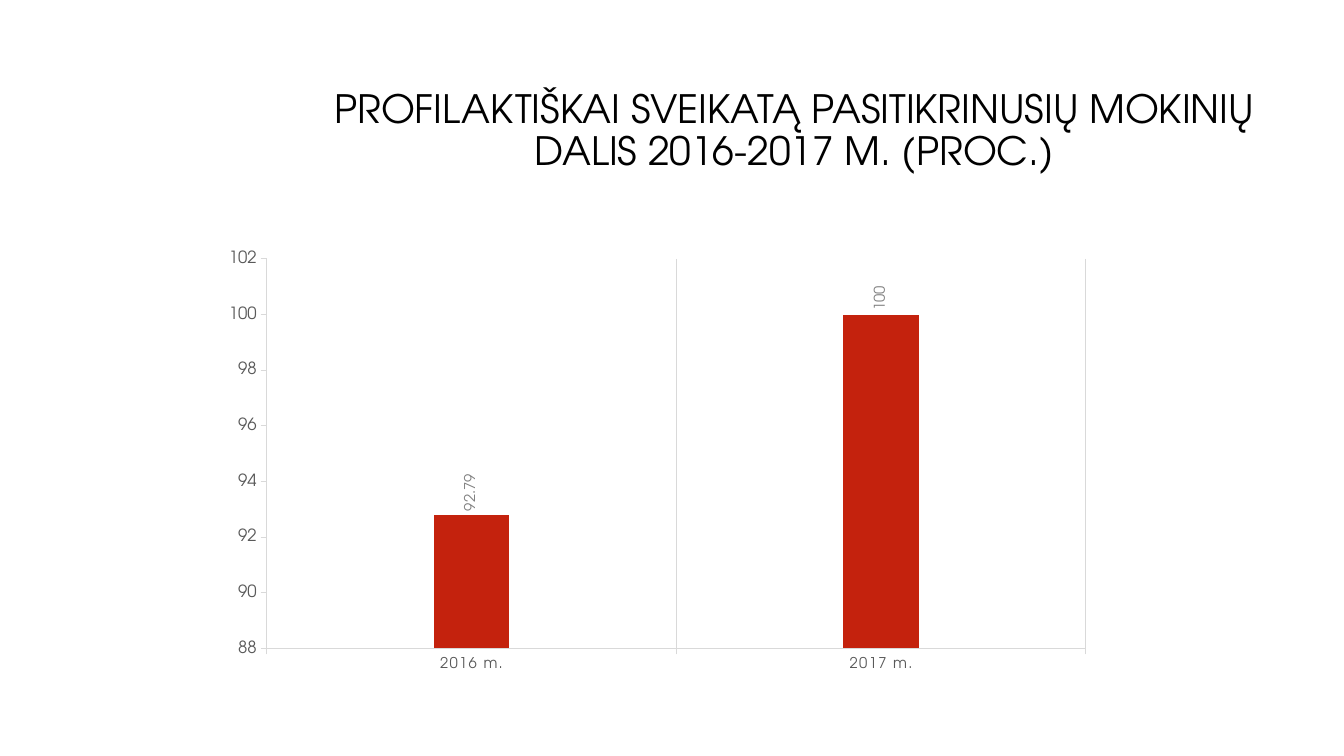
import pptx
import pptx.chart.data
import pptx.dml.color
import pptx.enum.chart
import pptx.enum.text
import pptx.oxml
import pptx.oxml.ns
import pptx.util

FONT = "TeX Gyre Adventor"
COLORS = {
    "background": "FFFFFF",
    "title": "000000",
    "bar": "C4220D",
    "axis": "D9D9D9",
    "tick_text": "595959",
    "value_text": "808080",
}
CHECKED_SHARE = {"2016 m.": 92.79, "2017 m.": 100}


def rgb(name):
    """Return the named colour."""
    return pptx.dml.color.RGBColor.from_string(COLORS[name])


def style_font(font, size, color):
    """Apply the slide's typeface with a size and colour."""
    font.name = FONT
    font.size = pptx.util.Pt(size)
    font.bold = False
    font.color.rgb = rgb(color)


def style_line(line):
    """Draw an axis or grid line."""
    line.color.rgb = rgb("axis")
    line.width = pptx.util.Pt(0.75)


def place_heading(slide, left, top, width, height):
    """Place the heading in the title placeholder."""
    heading = slide.shapes.title
    heading.left, heading.top, heading.width, heading.height = left, top, width, height
    frame = heading.text_frame
    frame.word_wrap = True
    frame.auto_size = pptx.enum.text.MSO_AUTO_SIZE.NONE
    frame.vertical_anchor = pptx.enum.text.MSO_ANCHOR.MIDDLE
    paragraph = frame.paragraphs[0]
    paragraph.alignment = pptx.enum.text.PP_ALIGN.CENTER
    paragraph.line_spacing = 0.9
    run = paragraph.add_run()
    run.text = "PROFILAKTIŠKAI SVEIKATĄ PASITIKRINUSIŲ MOKINIŲ DALIS 2016-2017 M. (PROC.)"
    style_font(run.font, 27.9, "title")


def fix_plot_area(chart, x, y, width, height):
    """Set the inner plot area as fractions of the chart."""
    plot_area = chart.plots[0]._element.getparent()
    for automatic in plot_area.findall(pptx.oxml.ns.qn("c:layout")):
        plot_area.remove(automatic)
    places = {"x": x, "y": y, "w": width, "h": height}
    entries = '<c:layoutTarget val="inner"/><c:xMode val="edge"/><c:yMode val="edge"/>'
    entries += "".join(f'<c:{key} val="{value}"/>' for key, value in places.items())
    plot_area.insert(0, pptx.oxml.parse_xml(
        f'<c:layout {pptx.oxml.ns.nsdecls("c")}>'
        f"<c:manualLayout>{entries}</c:manualLayout></c:layout>"))


def place_share_chart(slide, left, top, width, height):
    """Place the column chart of checked pupils by year."""
    data = pptx.chart.data.CategoryChartData()
    data.categories = list(CHECKED_SHARE)
    data.add_series("Series 1", list(CHECKED_SHARE.values()))
    chart = slide.shapes.add_chart(
        pptx.enum.chart.XL_CHART_TYPE.COLUMN_CLUSTERED, left, top, width, height, data).chart
    chart.has_title = False
    chart.has_legend = False
    style_font(chart.font, 10, "title")
    fix_plot_area(chart, 0.1, 0.038, 0.8, 0.878)

    years, percent = chart.category_axis, chart.value_axis
    for axis, size in ((years, 10.6), (percent, 12)):
        axis.major_tick_mark = pptx.enum.chart.XL_TICK_MARK.OUTSIDE
        axis.minor_tick_mark = pptx.enum.chart.XL_TICK_MARK.NONE
        style_line(axis.format.line)
        style_font(axis.tick_labels.font, size, "tick_text")
    years.has_major_gridlines = True
    style_line(years.major_gridlines.format.line)
    years.tick_labels.font._element.set("spc", "100")
    percent.has_major_gridlines = False
    percent.minimum_scale, percent.maximum_scale, percent.major_unit = 88, 102, 2

    columns = chart.plots[0]
    columns.gap_width = 444
    columns.overlap = -90
    columns.vary_by_categories = False
    share = columns.series[0]
    share.format.fill.solid()
    share.format.fill.fore_color.rgb = rgb("bar")
    share.format.line.fill.background()
    values = share.data_labels
    values.show_value = True
    values.position = pptx.enum.chart.XL_LABEL_POSITION.OUTSIDE_END
    style_font(values.font, 10.6, "value_text")
    body = values._element.find(".//" + pptx.oxml.ns.qn("a:bodyPr"))
    body.set("rot", "-5400000")
    body.set("vert", "horz")


def main():
    """Build and save the slide."""
    Cm = pptx.util.Cm
    deck = pptx.Presentation()
    deck.slide_width, deck.slide_height = Cm(33.87), Cm(19.05)
    slide = deck.slides.add_slide(deck.slide_layouts[5])
    slide.background.fill.solid()
    slide.background.fill.fore_color.rgb = rgb("background")
    place_heading(slide, Cm(8.05), Cm(2), Cm(23.93), Cm(2.64))
    place_share_chart(slide, Cm(4.14), Cm(6.1), Cm(25.81), Cm(11.18))
    deck.save("out.pptx")


if __name__ == "__main__":
    main()
